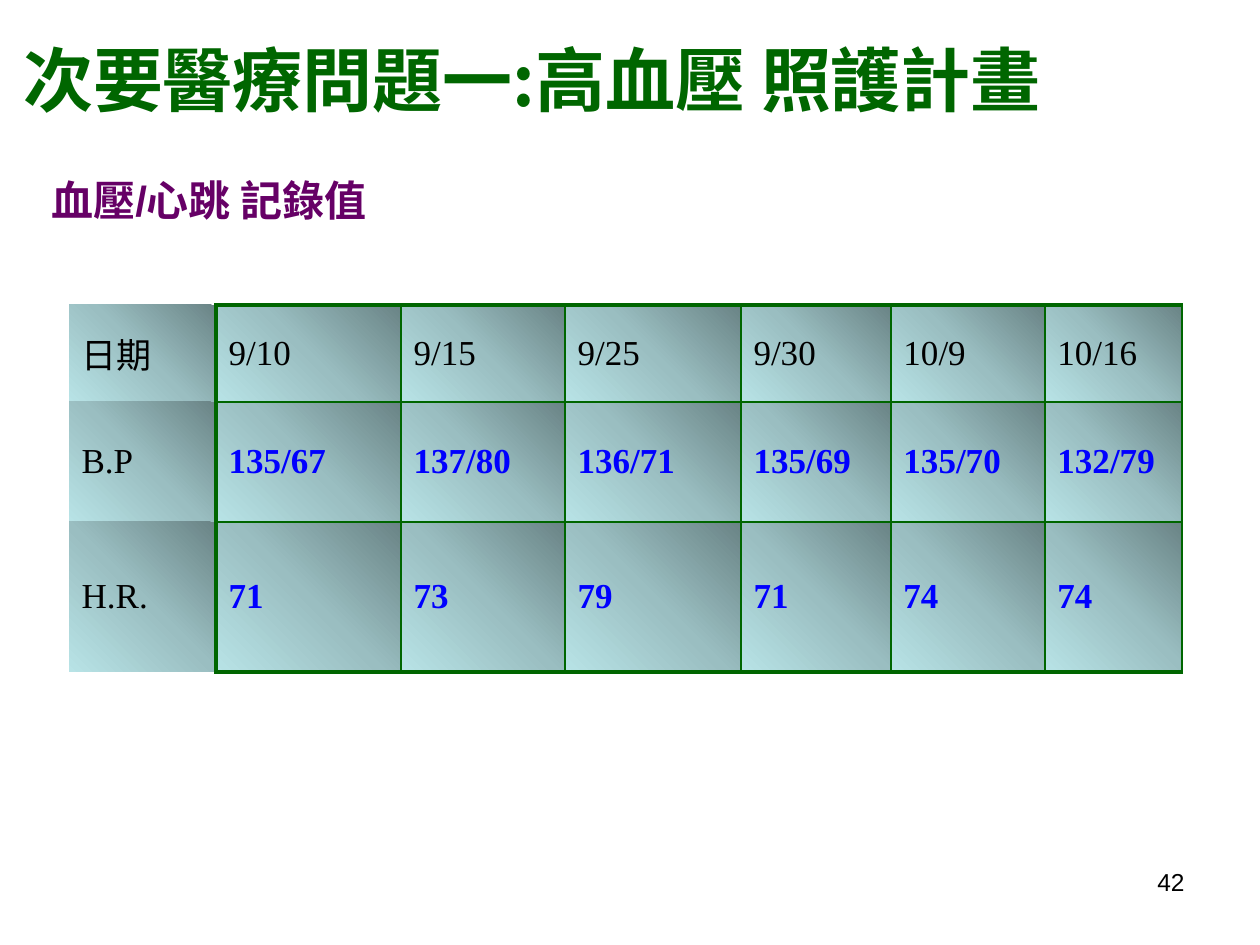
from dataclasses import dataclass
from typing import NamedTuple

from pptx import Presentation
from pptx.dml.color import RGBColor
from pptx.enum.text import MSO_ANCHOR as Anchor, PP_ALIGN as Align
from pptx.oxml.ns import qn
from pptx.util import Emu, Pt
from lxml.etree import SubElement

EMU_PER_PX = 914400 / 126


class Box(NamedTuple):
    left: int
    top: int
    width: int
    height: int


@dataclass(frozen=True)
class Theme:
    """Colours, fonts and type sizes of the slide."""
    green: str = "006600"
    purple: str = "660066"
    blue: str = "0000FF"
    black: str = "000000"
    gradient: tuple = ((0, "6A8486"), (50, "9ABEC1"), (100, "B8E3E6"))
    gradient_angle: int = 135
    serif: str = "Times New Roman"
    sans: str = "Arial"
    display: str = "Vollkorn"
    chinese: str = "Noto Sans CJK SC"
    title_size: int = 40
    heading_size: int = 24
    table_size: int = 20
    number_size: int = 14
    thick: float = 2.25
    thin: float = 1


THEME = Theme()
DATES = ["日期", "9/10", "9/15", "9/25", "9/30", "10/9", "10/16"]
PRESSURES = ["B.P", "135/67", "137/80", "136/71", "135/69", "135/70", "132/79"]
HEART_RATES = ["H.R.", "71", "73", "79", "71", "74", "74"]
RECORDS = [DATES, PRESSURES, HEART_RATES]
COLUMN_WIDTHS = [147, 185, 164, 176, 150, 154, 137]
ROW_HEIGHTS = [97, 120, 150]


def px(length):
    """Turn pixels into EMU."""
    return Emu(round(length * EMU_PER_PX))


def add_text(paragraph, text, *, size, color, font, bold=False, align=Align.LEFT):
    """Add a formatted run to a paragraph."""
    paragraph.alignment = align
    run = paragraph.add_run()
    run.text = text
    run.font.size = Pt(size)
    run.font.bold = bold
    run.font.name = font
    run.font.color.rgb = RGBColor.from_string(color)
    SubElement(run.font._element, qn("a:ea"), typeface=THEME.chinese)


def add_text_frame(slide, box, anchor=Anchor.TOP):
    """Add a wrapping text box and return its first paragraph."""
    frame = slide.shapes.add_textbox(*map(px, box)).text_frame
    frame.word_wrap = True
    frame.vertical_anchor = anchor
    return frame.paragraphs[0]


def add_title(slide, box):
    """Add the title with its three fonts."""
    paragraph = add_text_frame(slide, box, Anchor.MIDDLE)
    parts = [("次要醫療問題一", THEME.serif), (":", THEME.chinese),
             ("高血壓 照護計畫", THEME.display)]
    for text, font in parts:
        add_text(paragraph, text, size=THEME.title_size, color=THEME.green,
                 font=font, bold=True, align=Align.CENTER)


def add_heading(slide, box):
    """Add the heading above the table."""
    add_text(add_text_frame(slide, box), "血壓/心跳 記錄值", size=THEME.heading_size,
             color=THEME.purple, font=THEME.sans, bold=True)


def add_slide_number(slide, box):
    """Add the slide number."""
    add_text(add_text_frame(slide, box), "42", size=THEME.number_size,
             color=THEME.black, font=THEME.sans, align=Align.RIGHT)


def add_solid_fill(parent, color):
    """Append a solid fill element."""
    SubElement(SubElement(parent, qn("a:solidFill")), qn("a:srgbClr"), val=color)


def style_cell(cell, borders):
    """Give a cell its borders and gradient; a width of zero hides a border."""
    properties = cell._tc.get_or_add_tcPr()
    for side, width in borders.items():
        line = SubElement(properties, qn(f"a:ln{side}"), w=str(Pt(width)))
        if width:
            add_solid_fill(line, THEME.green)
        else:
            SubElement(line, qn("a:noFill"))
    gradient = SubElement(properties, qn("a:gradFill"), rotWithShape="1")
    stops = SubElement(gradient, qn("a:gsLst"))
    for position, color in THEME.gradient:
        stop = SubElement(stops, qn("a:gs"), pos=str(position * 1000))
        SubElement(stop, qn("a:srgbClr"), val=color)
    SubElement(gradient, qn("a:lin"), ang=str(THEME.gradient_angle * 60000), scaled="1")


def cell_borders(row, column):
    """Return the border widths of a cell, in the order L, R, T, B."""
    if column == 0:
        return {"L": 0, "R": THEME.thick, "T": 0, "B": 0}
    return {
        "L": THEME.thick if column == 1 else THEME.thin,
        "R": THEME.thin,
        "T": THEME.thick if row == 0 else THEME.thin,
        "B": THEME.thick if row == len(RECORDS) - 1 else THEME.thin,
    }


def add_record_table(slide, box):
    """Add the table of blood pressure and heart rate by date."""
    table = slide.shapes.add_table(len(RECORDS), len(DATES), *map(px, box)).table
    table.first_row = table.horz_banding = False
    for column, width in zip(table.columns, COLUMN_WIDTHS):
        column.width = px(width)
    for row, height in zip(table.rows, ROW_HEIGHTS):
        row.height = px(height)
    for row, values in enumerate(RECORDS):
        for column, value in enumerate(values):
            cell = table.cell(row, column)
            cell.vertical_anchor = Anchor.MIDDLE
            is_reading = row > 0 and column > 0
            is_corner = row == column == 0
            paragraph = cell.text_frame.paragraphs[0]
            add_text(paragraph, value, size=THEME.table_size, bold=is_reading,
                     color=THEME.blue if is_reading else THEME.black,
                     font=THEME.chinese if is_corner else THEME.serif)
            spacing = SubElement(paragraph._p.get_or_add_pPr(), qn("a:spcBef"))
            SubElement(spacing, qn("a:spcPct"), val="20000")
            style_cell(cell, cell_borders(row, column))


def main():
    """Build the slide and save it."""
    presentation = Presentation()
    presentation.slide_width, presentation.slide_height = px(1260), px(945)
    slide = presentation.slides.add_slide(presentation.slide_layouts[6])
    add_title(slide, Box(-35, -1, 1134, 158))
    add_slide_number(slide, Box(903, 861, 294, 66))
    add_heading(slide, Box(39, 168, 427, 63))
    add_record_table(slide, Box(69, 305, sum(COLUMN_WIDTHS), sum(ROW_HEIGHTS)))
    presentation.save("out.pptx")


if __name__ == "__main__":
    main()
